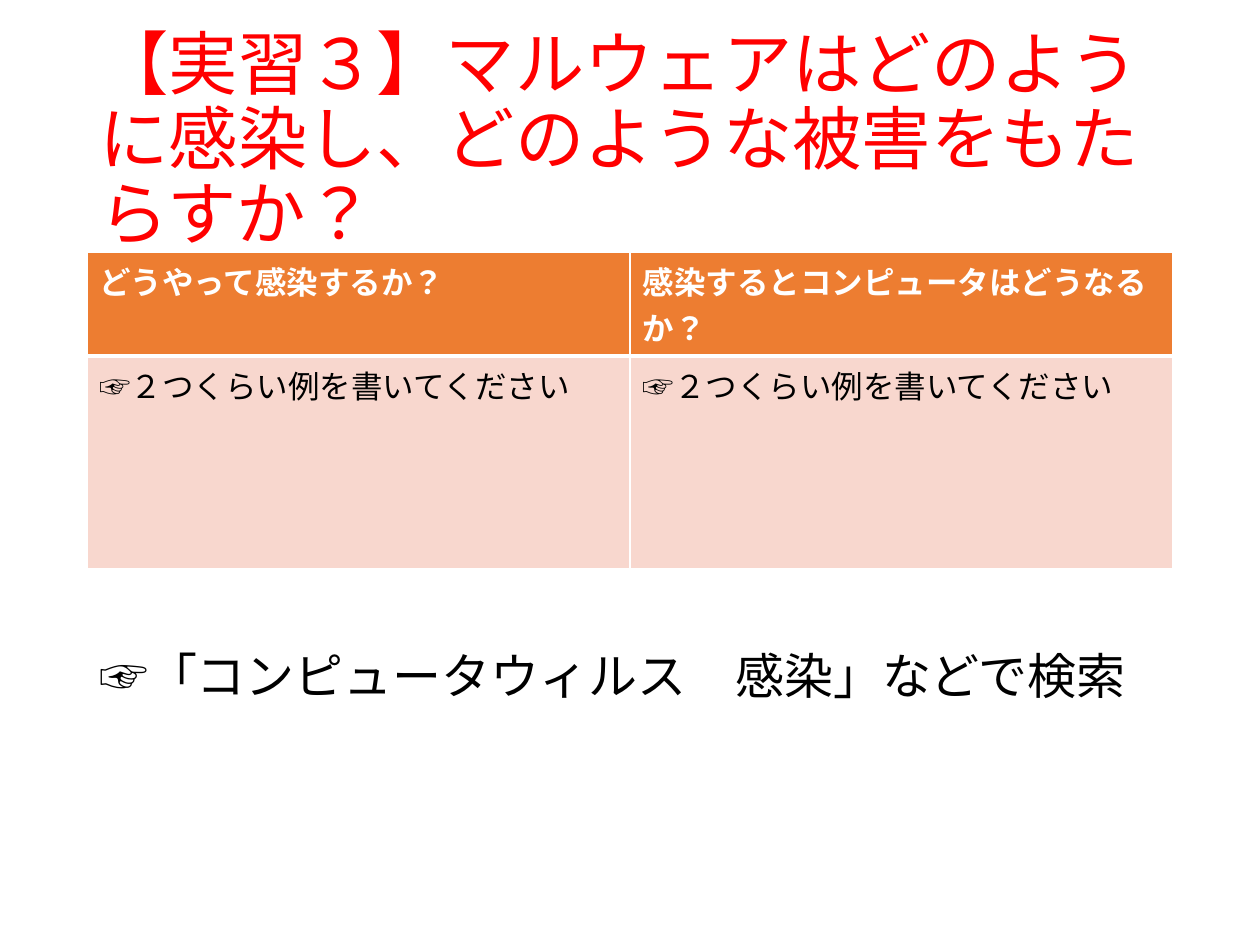
from dataclasses import dataclass

from lxml.etree import SubElement
from pptx import Presentation
from pptx.dml.color import RGBColor
from pptx.enum.lang import MSO_LANGUAGE_ID
from pptx.enum.text import MSO_ANCHOR, MSO_AUTO_SIZE, PP_ALIGN
from pptx.oxml.ns import qn
from pptx.util import Cm, Pt


@dataclass(frozen=True)
class Theme:
    """Colours, typeface and type sizes of the slide."""
    font: str = "Calibri"
    title_color: str = "FF0000"
    text_color: str = "000000"
    header_text: str = "FFFFFF"
    header_fill: str = "ED7D31"
    body_fill: str = "F8D7CE"
    border_color: str = "FFFFFF"
    title_size: float = 39.6
    table_size: float = 18
    hint_size: float = 28


@dataclass(frozen=True)
class Box:
    """Area of the slide that a region fills."""
    left: int
    top: int
    width: int
    height: int


THEME = Theme()
MARGIN = Cm(1.75)
CONTENT_WIDTH = Cm(21.9)
QUESTIONS = ["どうやって感染するか？", "感染するとコンピュータはどうなるか？"]
PROMPT = "☞２つくらい例を書いてください"


def style_paragraph(paragraph, size, color, bold=False):
    """Format a whole paragraph in the theme's typeface as Japanese text."""
    paragraph.alignment = PP_ALIGN.LEFT
    paragraph.font.name = THEME.font
    paragraph.font.size = Pt(size)
    paragraph.font.bold = bold
    paragraph.font.color.rgb = RGBColor.from_string(color)
    for run in paragraph.runs:
        run.font.language_id = MSO_LANGUAGE_ID.JAPANESE


def set_borders(cell, bottom_width):
    """Draw the cell's borders, with a bottom line of its own width."""
    properties = cell._tc.get_or_add_tcPr()
    widths = {"a:lnL": 1, "a:lnR": 1, "a:lnT": 1, "a:lnB": bottom_width}
    for position, (tag, width) in enumerate(widths.items()):
        line = SubElement(properties, qn(tag), w=str(Pt(width)))
        fill = SubElement(line, qn("a:solidFill"))
        SubElement(fill, qn("a:srgbClr"), val=THEME.border_color)
        properties.insert(position, line)


def add_title(slide, box, text):
    """Place the slide title in the title placeholder."""
    title = slide.shapes.title
    title.left, title.top = box.left, box.top
    title.width, title.height = box.width, box.height
    frame = title.text_frame
    frame.text = text
    frame.word_wrap = True
    frame.auto_size = MSO_AUTO_SIZE.NONE
    frame.vertical_anchor = MSO_ANCHOR.MIDDLE
    paragraph = frame.paragraphs[0]
    paragraph.line_spacing = 0.9
    style_paragraph(paragraph, THEME.title_size, THEME.title_color)


def add_worksheet(slide, box, questions, prompt):
    """Place the answer table with one question in each column."""
    table = slide.shapes.add_table(
        2, len(questions), box.left, box.top, box.width, box.height).table
    header_height = Cm(2.06)
    table.rows[0].height = header_height
    table.rows[1].height = box.height - header_height
    rows = [
        (questions, THEME.header_fill, THEME.header_text, True, 3),
        ([prompt] * len(questions), THEME.body_fill, THEME.text_color, False, 1),
    ]
    for row, (texts, fill, color, bold, bottom_width) in zip(table.rows, rows):
        for cell, text in zip(row.cells, texts):
            cell.text = text
            cell.fill.solid()
            cell.fill.fore_color.rgb = RGBColor.from_string(fill)
            style_paragraph(cell.text_frame.paragraphs[0], THEME.table_size, color, bold)
            set_borders(cell, bottom_width)


def add_hint(slide, box, text):
    """Place the search hint below the table."""
    shape = slide.shapes.add_textbox(box.left, box.top, box.width, box.height)
    frame = shape.text_frame
    frame.text = text
    frame.word_wrap = True
    frame.auto_size = MSO_AUTO_SIZE.SHAPE_TO_FIT_TEXT
    style_paragraph(frame.paragraphs[0], THEME.hint_size, THEME.text_color)


def main():
    """Build and save the presentation."""
    presentation = Presentation()
    presentation.slide_width, presentation.slide_height = Cm(25.4), Cm(19.05)
    slide = presentation.slides.add_slide(presentation.slide_layouts.get_by_name("Title Only"))
    add_title(slide, Box(MARGIN, Cm(1.02), CONTENT_WIDTH, Cm(3.68)),
              "【実習３】マルウェアはどのように感染し、どのような被害をもたらすか？")
    add_worksheet(slide, Box(MARGIN, Cm(5.08), CONTENT_WIDTH, Cm(6.35)), QUESTIONS, PROMPT)
    add_hint(slide, Box(MARGIN, Cm(12.88), CONTENT_WIDTH, Cm(1.45)),
             "☞「コンピュータウィルス　感染」などで検索")
    presentation.save("out.pptx")


if __name__ == "__main__":
    main()
